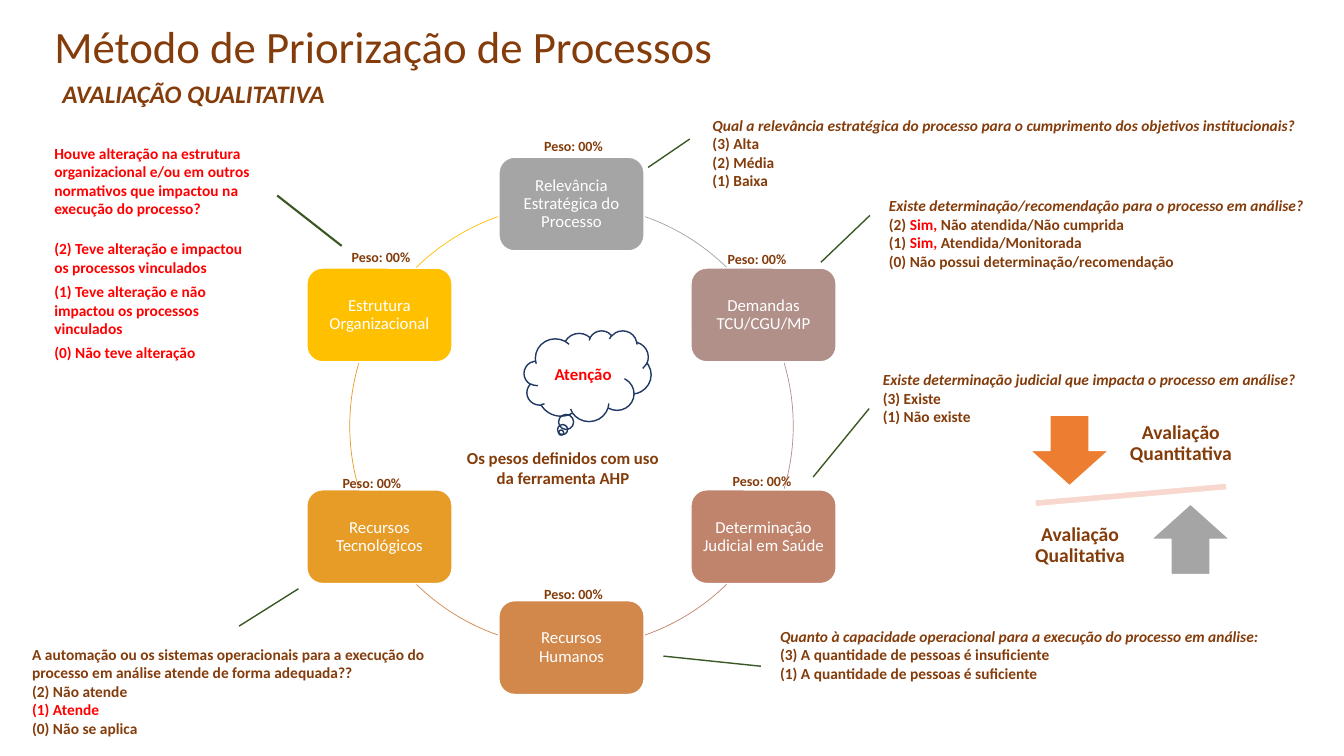
from dataclasses import dataclass
from math import cos, radians, sin

from lxml import etree
from pptx import Presentation
from pptx.dml.color import RGBColor
from pptx.enum.shapes import MSO_CONNECTOR, MSO_SHAPE
from pptx.enum.text import MSO_ANCHOR, PP_ALIGN
from pptx.oxml.ns import qn
from pptx.util import Inches, Pt

BROWN = RGBColor(0x84, 0x3C, 0x0B)
RED = RGBColor(0xFF, 0x00, 0x00)
WHITE = RGBColor(0xFF, 0xFF, 0xFF)
GREY = RGBColor(0xA5, 0xA5, 0xA5)
MAUVE = RGBColor(0xB1, 0x90, 0x8A)
CLAY = RGBColor(0xC0, 0x84, 0x6C)
COPPER = RGBColor(0xD2, 0x88, 0x4B)
AMBER = RGBColor(0xE7, 0x9C, 0x27)
GOLD = RGBColor(0xFF, 0xC0, 0x00)
ORANGE = RGBColor(0xED, 0x7D, 0x31)
PINK = RGBColor(0xF8, 0xD7, 0xCE)
NAVY = RGBColor(0x20, 0x38, 0x64)
GREEN = RGBColor(0x3A, 0x59, 0x25)
PINE = RGBColor(0x38, 0x57, 0x23)

LEFT, CENTER = PP_ALIGN.LEFT, PP_ALIGN.CENTER
TOP, MIDDLE = MSO_ANCHOR.TOP, MSO_ANCHOR.MIDDLE
ROUND, ARC = MSO_SHAPE.ROUNDED_RECTANGLE, MSO_SHAPE.ARC
CALLOUT, CLOUD = MSO_SHAPE.LINE_CALLOUT_1_NO_BORDER, MSO_SHAPE.CLOUD_CALLOUT
DOWN, UP, MINUS = MSO_SHAPE.DOWN_ARROW, MSO_SHAPE.UP_ARROW, MSO_SHAPE.MATH_MINUS
STRAIGHT = MSO_CONNECTOR.STRAIGHT

# The grid has square cells: 133.33 columns by 75 rows.
CELL = Inches(0.1)
COLS, ROWS = 133.33, 75
RING_X, RING_Y, RADIUS = 56.7, 42.25, 22
NODE_W, NODE_H = 14.4, 9.3

Box = tuple[float, float, float, float]


@dataclass
class Node:
    text: str
    color: RGBColor
    label: tuple[float, float]


@dataclass
class Query:
    box: Box
    line: tuple[float, ...]
    lines: list[str]
    lead: bool = True
    anchor: MSO_ANCHOR = MIDDLE


@dataclass
class Arrow:
    kind: MSO_SHAPE
    color: RGBColor
    box: Box
    text: str
    text_box: Box


NODES = [
    Node("Relevância Estratégica do Processo", GREY, (53, 13.2)),
    Node("Demandas TCU/CGU/MP", MAUVE, (71.2, 24.4)),
    Node("Determinação Judicial em Saúde", CLAY, (71.7, 46.4)),
    Node("Recursos Humanos", COPPER, (53, 57.6)),
    Node("Recursos Tecnológicos", AMBER, (33, 46.6)),
    Node("Estrutura Organizacional", GOLD, (33.9, 24.2)),
]
# Start and end of each arc between two nodes, in degrees from the top.
ARCS = [(19.4, 44.4), (73.5, 106.5), (135.6, 160.6),
        (199.4, 224.4), (253.5, 286.5), (315.6, 340.6)]

# Text between asterisks is red.
QUERIES = [
    Query((87.2, 17.6, 45, 11.1), (0.34, -0.02, 0.759, -0.128), [
        "Existe determinação/recomendação para o processo em análise?",
        "(2) *Sim, *Não atendida/Não cumprida",
        "(1) *Sim, *Atendida/Monitorada",
        "(0) Não possui determinação/recomendação"]),
    Query((69.7, 10.9, 63.6, 8.5), (0.34, -0.02, 0.672, -0.085), [
        "Qual a relevância estratégica do processo para o cumprimento "
        "dos objetivos institucionais?",
        "(3) Alta", "(2) Média", "(1) Baixa"]),
    Query((86.6, 35.9, 46.7, 7.2), (0.643, -0.008, 1.587, -0.127), [
        "Existe determinação judicial que impacta o processo em análise?",
        "(3) Existe", "(1) Não existe"]),
    Query((76.4, 61.2, 56.9, 7.5), (0.653, -0.016, 0.519, -0.186), [
        "Quanto à capacidade operacional para a execução do processo em análise:",
        "(3) A quantidade de pessoas é insuficiente",
        "(1) A quantidade de pessoas é suficiente"]),
    Query((2.2, 63.5, 42.1, 7.3), (-0.189, 0.511, -0.697, 0.651), [
        "A automação ou os sistemas operacionais para a execução do "
        "processo em análise atende de forma adequada??",
        "(2) Não atende", "*(1) Atende*", "(0) Não se aplica"],
        lead=False, anchor=TOP),
]
ARROWS = [
    Arrow(DOWN, ORANGE, (102.2, 41.2, 7.8, 7),
          "Avaliação Quantitativa", (110.4, 40.4, 13.5, 7.3)),
    Arrow(UP, GREY, (114.2, 50, 7.8, 7),
          "Avaliação Qualitativa", (101.2, 50.5, 11.9, 7.3)),
]
CHANGE = [
    "Houve alteração na estrutura organizacional e/ou em outros normativos "
    "que impactou na execução do processo?",
    "(2) Teve alteração e impactou os processos vinculados",
    "(1) Teve alteração e não impactou os processos vinculados",
    "(0) Não teve alteração",
]
CHANGE_GAPS = [(0, 0), (15.4, 2), (2, 2), (2, 2)]


def grid(*cells: float) -> list[int]:
    return [round(cell * CELL) for cell in cells]


def write(shape, lines: list[str], *, size: float = 11, color: RGBColor = BROWN,
          bold: bool = True, italic: bool = False, lead: bool = False,
          align: PP_ALIGN = LEFT, anchor: MSO_ANCHOR = TOP,
          inset: float | None = None, pitch: float | None = None,
          gaps: list[tuple[float, float]] | None = None) -> None:
    """Fill a shape with paragraphs; lead sets only the first in italics."""
    frame = shape.text_frame
    frame.word_wrap = True
    frame.vertical_anchor = anchor
    if inset is not None:
        frame.margin_left = frame.margin_right = Inches(inset)
        frame.margin_top = frame.margin_bottom = Inches(inset)
    for i, line in enumerate(lines):
        para = frame.add_paragraph() if i else frame.paragraphs[0]
        para.alignment = align
        para.line_spacing = pitch
        if gaps:
            para.space_before, para.space_after = map(Pt, gaps[i])
        for j, part in enumerate(line.split("*")):
            if not part:
                continue
            run = para.add_run()
            run.text = part
            font = run.font
            font.name, font.size, font.bold = "Calibri", Pt(size), bold
            font.italic = italic or (lead and i == 0)
            font.color.rgb = RED if j % 2 else color


def label(slide, box: Box, lines: list[str], **style) -> None:
    write(slide.shapes.add_textbox(*grid(*box)), lines, **style)


def draw(slide, kind: MSO_SHAPE, box: Box, *, fill: RGBColor | None = None,
         line: RGBColor = WHITE, width: float = 1):
    shape = slide.shapes.add_shape(kind, *grid(*box))
    shape.shadow.inherit = False
    if fill is None:
        shape.fill.background()
    else:
        shape.fill.solid()
        shape.fill.fore_color.rgb = fill
    shape.line.color.rgb = line
    shape.line.width = Pt(width)
    return shape


def draw_ring(slide) -> None:
    for i, (node, ends) in enumerate(zip(NODES, ARCS)):
        turn = radians(60 * i)
        left = RING_X + RADIUS * sin(turn) - NODE_W / 2
        top = RING_Y - RADIUS * cos(turn) - NODE_H / 2
        card = draw(slide, ROUND, (left, top, NODE_W, NODE_H), fill=node.color)
        write(card, [node.text], size=12, color=WHITE, bold=False,
              align=CENTER, anchor=MIDDLE, inset=0.05, pitch=0.9)
        arc = draw(slide, ARC, (RING_X - RADIUS, RING_Y - RADIUS,
                                2 * RADIUS, 2 * RADIUS), line=node.color, width=0.5)
        for j, end in enumerate(ends):
            arc.adjustments[j] = (end - 90) % 360 * 0.6
    for node in NODES:
        label(slide, (*node.label, 11.4, 2.7), ["Peso: 00%"], size=10)


def draw_query(slide, query: Query) -> None:
    shape = draw(slide, CALLOUT, query.box, line=GREEN)
    for i, share in enumerate(query.line):
        shape.adjustments[i] = share
    write(shape, query.lines, lead=query.lead, anchor=query.anchor)


def draw_scale(slide) -> None:
    draw(slide, MINUS, (99.2, 47.6, 26, 3), fill=PINK).rotation = 355
    for arrow in ARROWS:
        draw(slide, arrow.kind, arrow.box, fill=arrow.color)
        label(slide, arrow.text_box, [arrow.text], size=14, align=CENTER,
              anchor=MIDDLE, inset=0.11, pitch=0.9)


def main() -> None:
    deck = Presentation()
    deck.slide_width, deck.slide_height = grid(COLS, ROWS)
    slide = deck.slides.add_slide(deck.slide_layouts[6])
    label(slide, (4.4, 1.4, 105.6, 6.4), ["Método de Priorização de Processos"],
          size=32, bold=False)
    draw_ring(slide)
    for query in QUERIES:
        draw_query(slide, query)
    draw_scale(slide)
    cloud = draw(slide, CLOUD, (52, 32.8, 12.6, 9), line=NAVY)
    write(cloud, ["Atenção"], size=12, color=RED, align=CENTER, anchor=MIDDLE)
    label(slide, (44.8, 43.9, 22.1, 5),
          ["Os pesos definidos com uso da ferramenta AHP"], size=12, align=CENTER)
    label(slide, (0, 7.3, 38.4, 4), ["AVALIAÇÃO QUALITATIVA"],
          size=18, italic=True, align=CENTER)
    label(slide, (4.4, 13.8, 21.4, 24.6), CHANGE, color=RED, gaps=CHANGE_GAPS)
    link = slide.shapes.add_connector(STRAIGHT, *grid(27.5, 19.4, 33.9, 24.4))
    link.line.color.rgb = PINE
    link.line.width = Pt(1.5)
    etree.SubElement(link._element.spPr, qn("a:effectLst"))
    deck.save("out.pptx")


if __name__ == "__main__":
    main()
